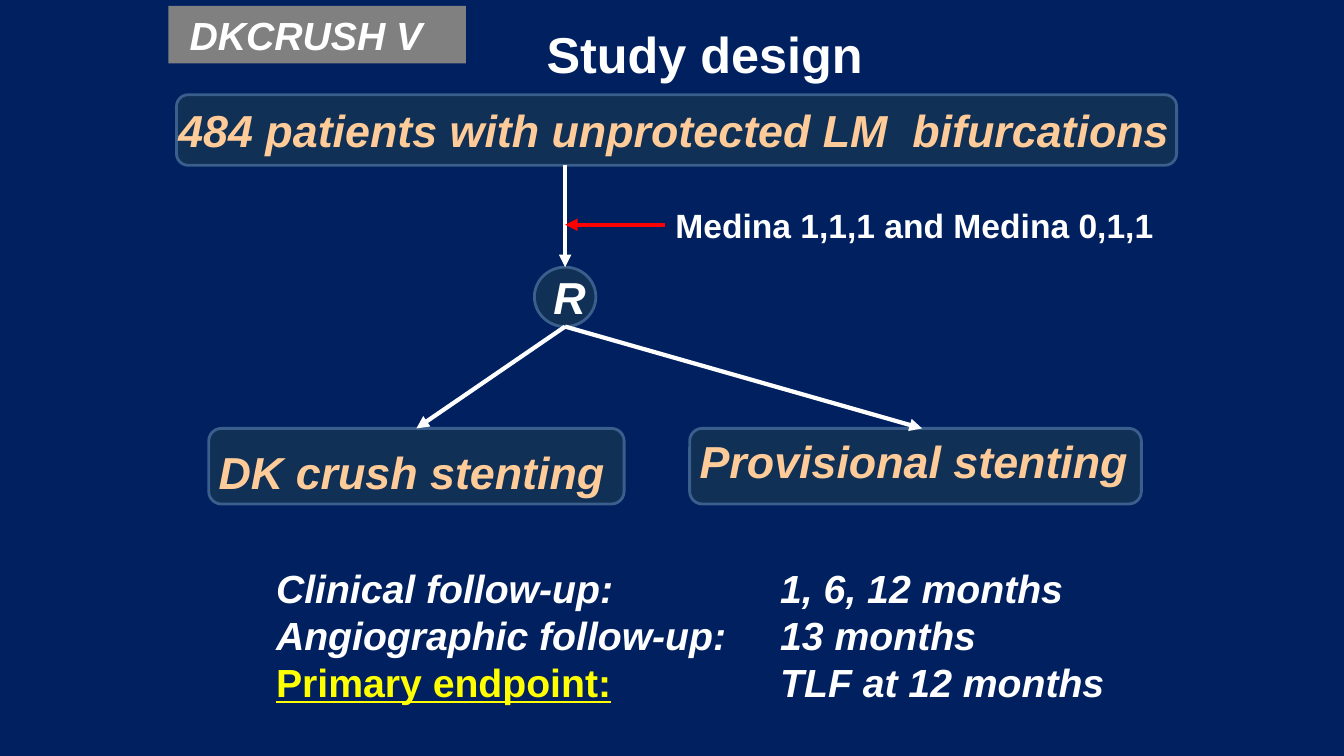
from lxml import etree
from pptx import Presentation
from pptx.dml.color import RGBColor
from pptx.enum import shapes, text
from pptx.oxml.ns import qn
from pptx.util import Inches, Pt

THEME = {
    "font": "Arial",
    "background": "002060", "box": "113056", "box_line": "3A5F8C", "tag": "808080",
    "white": "FFFFFF", "peach": "FFCC99", "yellow": "FFFF00", "red": "FF0000",
    "title": 36, "heading": 32, "body": 28, "note": 24,
    "box_width": 2, "arrow_width": 3,
}

# Places are left, top, width, height in inches.
TITLE = ("Study design", (2.74, 0.18, 8.5, 0.83))
TAG = ("DKCRUSH V", (1.67, 0.06, 2.95, 0.57))
# Each group: text, place of the box, place of its label
GROUPS = {
    "patients": ("484 patients with unprotected LM  bifurcations",
                 (1.75, 0.94, 9.92, 0.7), (1.67, 0.97, 10.08, 0.64)),
    "crush": ("DK crush stenting", (2.07, 4.25, 4.12, 0.75), (2.07, 4.36, 4.15, 0.64)),
    "provisional": ("Provisional stenting", (6.84, 4.25, 4.48, 0.75), (6.84, 4.25, 4.61, 0.64)),
}
CRITERIA = ("Medina 1,1,1 and Medina 0,1,1", (6.6, 1.98, 5.14, 0.5))
RANDOMISATION = ("R", (5.3, 2.65, 0.61, 0.59))
FOLLOW_UP_PLACE = (2.64, 5.55, 9.03, 1.51)
FOLLOW_UP_TAB = 5.0
FOLLOW_UP = [
    ("Clinical follow-up:", "1, 6, 12 months", False),
    ("Angiographic follow-up:", "13 months", False),
    ("Primary endpoint:", "TLF at 12 months", True),
]


def colour(name):
    return RGBColor.from_string(THEME[name])


def style(font, size, colour_name, italic=True):
    font.name, font.size, font.bold, font.italic = THEME["font"], Pt(THEME[size]), True, italic
    font.color.rgb = colour(colour_name)


def write(shape, words, size, colour_name, italic=True, align=text.PP_ALIGN.LEFT):
    frame = shape.text_frame
    frame.word_wrap = True
    paragraph = frame.paragraphs[0]
    paragraph.text = words
    paragraph.alignment = align
    style(paragraph.font, size, colour_name, italic)


def add_label(slide, place, *args, **options):
    label = slide.shapes.add_textbox(*map(Inches, place))
    write(label, *args, **options)
    return label


def add_box(slide, kind, place, fill="box", line="box_line"):
    box = slide.shapes.add_shape(kind, *map(Inches, place))
    box.shadow.inherit = False
    box.fill.solid()
    box.fill.fore_color.rgb = colour(fill)
    if line:
        box.line.color.rgb = colour(line)
        box.line.width = Pt(THEME["box_width"])
    else:
        box.line.fill.background()
    return box


def add_arrow(slide, start, end, colour_name="white"):
    arrow = slide.shapes.add_connector(shapes.MSO_CONNECTOR.STRAIGHT, *start, *end)
    arrow.line.color.rgb = colour(colour_name)
    arrow.line.width = Pt(THEME["arrow_width"])
    etree.SubElement(arrow.line._get_or_add_ln(), qn("a:tailEnd"), type="triangle")
    etree.SubElement(arrow._element.spPr, qn("a:effectLst"))
    return arrow


def top_middle(shape):
    return shape.left + shape.width // 2, shape.top


def add_follow_up(slide):
    frame = slide.shapes.add_textbox(*map(Inches, FOLLOW_UP_PLACE)).text_frame
    frame.word_wrap = True
    for index, (name, value, primary) in enumerate(FOLLOW_UP):
        paragraph = frame.add_paragraph() if index else frame.paragraphs[0]
        tabs = etree.SubElement(paragraph._p.get_or_add_pPr(), qn("a:tabLst"))
        etree.SubElement(tabs, qn("a:tab"), pos=str(Inches(FOLLOW_UP_TAB)), algn="l")
        name_run, value_run = paragraph.add_run(), paragraph.add_run()
        name_run.text, value_run.text = name + "\t", value
        style(name_run.font, "body", "yellow" if primary else "white", italic=not primary)
        name_run.font.underline = primary
        style(value_run.font, "body", "white")


def main():
    presentation = Presentation()
    presentation.slide_width, presentation.slide_height = Inches(13.33), Inches(7.5)
    slide = presentation.slides.add_slide(presentation.slide_layouts[6])
    slide.background.fill.solid()
    slide.background.fill.fore_color.rgb = colour("background")

    words, place = TITLE
    add_label(slide, place, words, "title", "white", italic=False, align=text.PP_ALIGN.CENTER)

    words, place = TAG
    tag = add_box(slide, shapes.MSO_SHAPE.RECTANGLE, place, "tag", None)
    tag.text_frame.margin_left = Inches(0.21)
    tag.text_frame.vertical_anchor = text.MSO_ANCHOR.TOP
    write(tag, words, "body", "white")

    boxes, labels = {}, {}
    for key, (words, box_place, label_place) in GROUPS.items():
        boxes[key] = add_box(slide, shapes.MSO_SHAPE.ROUNDED_RECTANGLE, box_place)
        labels[key] = add_label(slide, label_place, words, "heading", "peach")

    words, place = CRITERIA
    criteria = add_label(slide, place, words, "note", "white", italic=False)
    words, place = RANDOMISATION
    circle = add_box(slide, shapes.MSO_SHAPE.OVAL, place)
    circle.text_frame.vertical_anchor = text.MSO_ANCHOR.MIDDLE
    write(circle, words, "heading", "white", align=text.PP_ALIGN.CENTER)
    add_follow_up(slide)

    axis, circle_top = top_middle(circle)
    circle_bottom = circle_top + circle.height
    patients = boxes["patients"]
    add_arrow(slide, (axis, patients.top + patients.height),
              (axis, circle_top)).end_connect(circle, 0)
    for target in (boxes["crush"], labels["provisional"]):
        add_arrow(slide, (axis, circle_bottom), top_middle(target)).end_connect(target, 0)
    criteria_middle = criteria.top + criteria.height // 2
    add_arrow(slide, (criteria.left, criteria_middle), (axis, criteria_middle),
              "red").begin_connect(criteria, 1)

    presentation.save("out.pptx")


if __name__ == "__main__":
    main()
